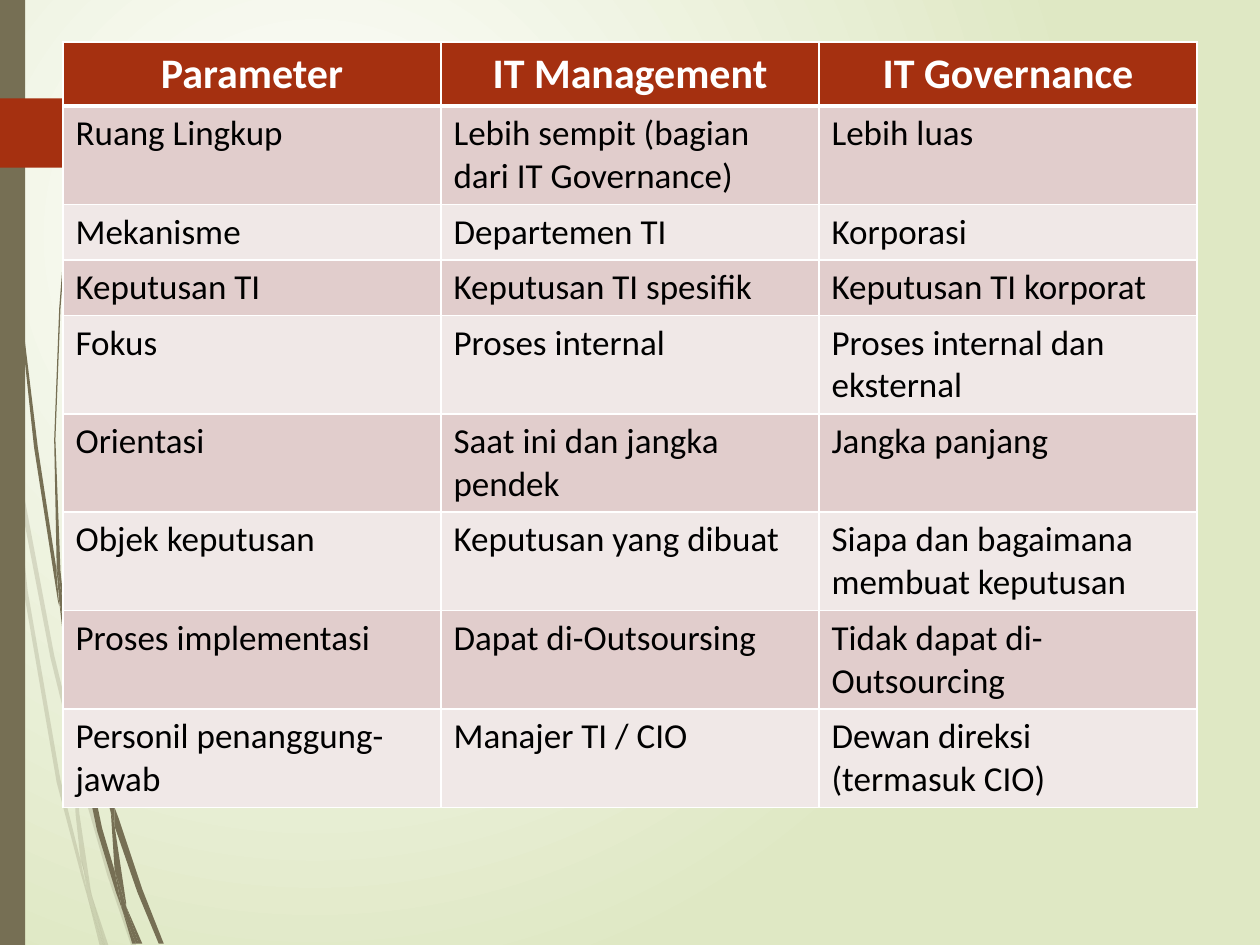
from pptx import Presentation
from pptx.dml.color import RGBColor
from pptx.enum.shapes import MSO_SHAPE as Shape
from pptx.enum.text import PP_ALIGN as Align
from pptx.oxml.ns import qn
from pptx.util import Cm, Pt
from lxml.etree import SubElement

FAINT_STRANDS = [
    [(8, 350), (6, 322), (0, 282), (0, 299), (7, 344)],
    [(40, 522), (59, 599), (59, 586), (43, 520), (10, 345), (12, 376)],
    [(64, 607), (61, 596), (61, 610), (85, 694), (104, 750), (108, 750), (88, 692)],
    [(83, 750), (86, 750), (73, 711)],
    [(64, 683), (48, 619), (22, 469), (12, 376), (8, 350), (19, 470), (45, 621),
     (64, 693), (70, 714), (69, 707)],
    [(58, 599), (60, 646), (64, 683), (67, 692), (73, 711), (72, 706), (63, 646),
     (61, 610), (61, 608)],
    [(61, 584), (76, 462), (111, 349), (159, 245), (187, 198), (201, 175), (217, 154),
     (217, 153), (201, 175), (186, 197), (158, 244), (110, 348), (75, 461), (59, 584),
     (59, 586), (61, 596)],
    [(70, 714), (79, 750), (82, 750)],
    [(61, 608), (61, 610), (61, 596), (59, 586), (58, 599)],
    [(67, 692), (65, 683), (69, 707), (70, 714), (82, 750), (83, 750), (73, 711)],
]
DARK_STRANDS = [
    [(5, 110), (14, 233), (27, 355), (46, 477), (47, 481), (45, 457), (45, 453),
     (30, 355), (15, 232), (6, 109), (4, 48), (3, 0), (2, 0), (3, 48)],
    [(73, 592), (88, 645), (88, 633), (88, 631), (77, 590), (50, 472), (53, 505)],
    [(94, 649), (91, 641), (91, 656), (109, 708), (126, 749), (130, 749), (113, 706)],
    [(91, 691), (81, 657), (60, 556), (53, 505), (47, 477), (56, 557), (77, 659),
     (92, 708), (97, 722), (96, 717)],
    [(50, 472), (48, 453), (44, 349), (48, 245), (52, 193), (58, 141), (51, 193),
     (47, 245), (43, 349), (45, 449), (49, 472)],
    [(110, 749), (113, 749), (100, 719)],
    [(47, 477), (53, 505), (50, 472), (49, 472), (45, 449), (45, 453)],
    [(91, 633), (103, 552), (131, 476), (169, 406), (191, 374), (203, 359), (216, 344),
     (215, 344), (203, 358), (191, 373), (168, 405), (129, 474), (101, 551), (88, 631),
     (91, 641)],
    [(97, 722), (105, 749), (108, 749)],
    [(88, 645), (91, 691), (96, 706), (100, 719), (100, 716), (91, 656), (90, 651)],
    [(88, 645), (90, 651), (91, 656), (91, 641), (88, 631), (88, 633)],
    [(96, 706), (91, 691), (96, 717), (97, 722), (108, 749), (110, 749), (100, 719)],
]
ARROW = [(149, 107), (124, 132), (121, 133), (0, 133), (0, 78), (121, 78), (124, 79),
         (149, 104), (149.5, 105.5)]
COMPARISON = [
    ("Parameter", "IT Management", "IT Governance"),
    ("Ruang Lingkup", "Lebih sempit (bagian dari IT Governance)", "Lebih luas"),
    ("Mekanisme", "Departemen TI", "Korporasi"),
    ("Keputusan TI", "Keputusan TI spesifik", "Keputusan TI korporat"),
    ("Fokus", "Proses internal", "Proses internal dan eksternal"),
    ("Orientasi", "Saat ini dan jangka pendek", "Jangka panjang"),
    ("Objek keputusan", "Keputusan yang dibuat", "Siapa dan bagaimana membuat keputusan"),
    ("Proses implementasi", "Dapat di-Outsoursing", "Tidak dapat di-Outsourcing"),
    ("Personil penanggung-jawab", "Manajer TI / CIO", "Dewan direksi\n(termasuk CIO)"),
]


def rgb(code):
    return RGBColor.from_string(code)


class Deck:
    font = "Calibri"
    olive, red, white, black = "766F54", "A53010", "FFFFFF", "000000"
    bands = "F0E8E7", "E1CDCC"
    hundredth_inch = Cm(0.0254)

    def __init__(self):
        self.deck = Presentation()
        self.deck.slide_width, self.deck.slide_height = Cm(25.4), Cm(19.05)
        self.slide = self.deck.slides.add_slide(self.deck.slide_layouts[6])

    def background(self, centre, edge):
        fill = self.slide.background.fill
        fill.gradient()
        for stop, color, position in zip(fill.gradient_stops, (centre, edge), (0, 1)):
            stop.color.rgb = rgb(color)
            stop.position = position
        gradient = next(self.slide.element.iter(qn("a:gradFill")))
        gradient.remove(gradient.find(qn("a:lin")))
        circle = SubElement(gradient, qn("a:path"), path="circle")
        SubElement(circle, qn("a:fillToRect"), l="50000", t="50000", r="100000", b="100000")

    def paint(self, shape, color, alpha=None):
        shape.shadow.inherit = False
        shape.fill.solid()
        shape.fill.fore_color.rgb = rgb(color)
        shape.line.fill.background()
        if alpha:
            tone = next(shape.element.spPr.iter(qn("a:srgbClr")))
            SubElement(tone, qn("a:alpha"), val=str(alpha * 1000))

    def outline(self, shapes, points, color, alpha=None):
        builder = shapes.build_freeform(*points[0], scale=self.hundredth_inch)
        builder.add_line_segments(points[1:])
        self.paint(builder.convert_to_shape(), color, alpha)

    def strands(self, outlines, alpha=None):
        group = self.slide.shapes.add_group_shape()
        for points in outlines:
            self.outline(group.shapes, points, self.olive, alpha)

    def bar(self, left, top, width, height):
        bar = self.slide.shapes.add_shape(
            Shape.RECTANGLE, Cm(left), Cm(top), Cm(width), Cm(height))
        self.paint(bar, self.olive)

    def border(self, cell, side, points):
        line = SubElement(cell._tc.get_or_add_tcPr(), qn(f"a:ln{side}"), w=str(Pt(points)))
        fill = SubElement(line, qn("a:solidFill"))
        SubElement(fill, qn("a:srgbClr"), val=self.white)

    def cell(self, cell, text, row):
        header = row == 0
        for side in "LRTB":
            thick = (row, side) in ((0, "B"), (1, "T"))
            self.border(cell, side, 3 if thick else 1)
        cell.fill.solid()
        cell.fill.fore_color.rgb = rgb(self.red if header else self.bands[row % 2])
        paragraph = cell.text_frame.paragraphs[0]
        paragraph.alignment = Align.CENTER if header else Align.LEFT
        for index, line in enumerate(text.split("\n")):
            if index:
                paragraph.add_line_break()
            run = paragraph.add_run()
            run.text = line
            run.font.name = self.font
            run.font.size = Pt(24 if header else 20)
            run.font.bold = header
            run.font.color.rgb = rgb(self.white if header else self.black)

    def table(self, rows, left, top, width, height, row_height):
        frame = self.slide.shapes.add_table(
            len(rows), len(rows[0]), Cm(left), Cm(top), Cm(width), Cm(height))
        for index, texts in enumerate(rows):
            frame.table.rows[index].height = Cm(row_height)
            for column, text in enumerate(texts):
                self.cell(frame.table.cell(index, column), text, index)
        frame.height = Cm(height)

    def save(self):
        self.deck.save("out.pptx")


def main():
    deck = Deck()
    deck.background("FFFFFF", "DFE8C4")
    deck.strands(FAINT_STRANDS, alpha=20)
    deck.strands(DARK_STRANDS)
    deck.bar(0, 0, 0.51, 19.05)
    deck.outline(deck.slide.shapes, ARROW, deck.red)
    deck.table(COMPARISON, 1.27, 0.85, 22.86, 15.16, row_height=1.03)
    deck.save()


if __name__ == "__main__":
    main()
